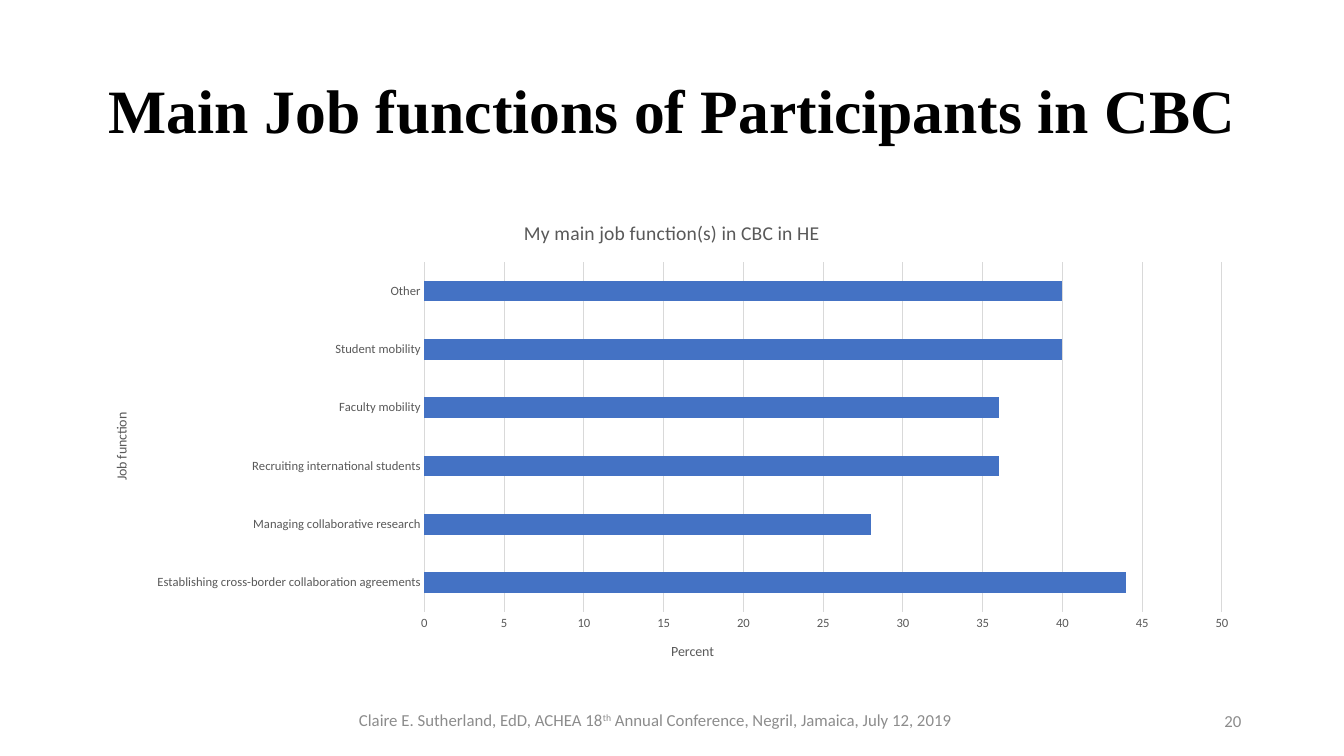
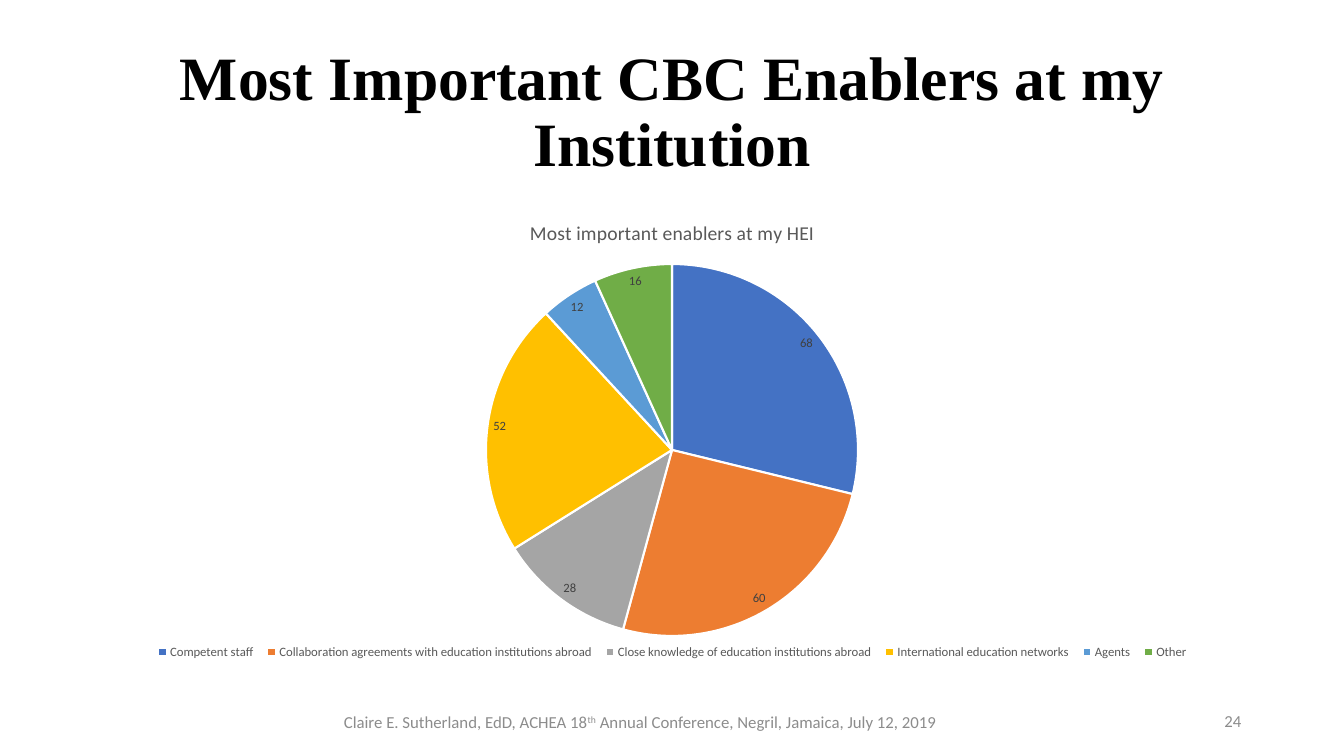
from pptx import Presentation
from pptx import util as u
from pptx.chart.data import CategoryChartData
from pptx.dml.color import RGBColor
from pptx.enum import chart as ch, text
from pptx.oxml import parse_xml
from pptx.oxml.ns import nsdecls, qn

COLORS = {
    "title": "000000", "footer": "8C8C8C", "chart_text": "595959",
    "label": "404040", "grid": "D9D9D9", "white": "FFFFFF",
    "blue": "4472C4", "orange": "ED7D31", "gray": "A5A5A5",
    "gold": "FFC000", "sky": "5B9BD5", "green": "70AD47",
}
SLICES = ("blue", "orange", "gray", "gold", "sky", "green")
FOOTER = (("Claire E. Sutherland, EdD, ACHEA 18", False), ("th", True),
          (" Annual Conference, Negril, Jamaica, July 12, 2019", False))
CHART_W, CHART_H = 11.5, 4.76


def rgb(name):
    return RGBColor.from_string(COLORS[name])


def place(element, box, inner=False):
    """Lay out a chart part by inches from the chart's top left corner."""
    old = element.find(qn("c:layout"))
    index = 0
    if old is not None:
        index = element.index(old)
        element.remove(old)
    target = '<c:layoutTarget val="inner"/>' if inner else ""
    modes = "".join(f'<c:{k}Mode val="edge"/>' for k in ("x", "y"))
    sizes = "".join(
        f'<c:{k} val="{v / whole}"/>'
        for k, v, whole in zip("xywh", box, (CHART_W, CHART_H) * 2))
    element.insert(index, parse_xml(
        f'<c:layout {nsdecls("c")}><c:manualLayout>{target}{modes}{sizes}'
        '</c:manualLayout></c:layout>'))


class Deck:
    """Shared style and the slide being built."""

    def __init__(self):
        self.prs = Presentation()
        self.prs.slide_width = u.Inches(13.33)
        self.prs.slide_height = u.Inches(7.5)
        self.s = None

    def font(self, font, size, color, name="Calibri", bold=False):
        font.size, font.name, font.bold = u.Pt(size), name, bold
        font.color.rgb = rgb(color)

    def text_box(self, box, align):
        sp = self.s.shapes.add_textbox(*map(u.Inches, box))
        tf = sp.text_frame
        tf.word_wrap = True
        tf.vertical_anchor = text.MSO_ANCHOR.MIDDLE
        p = tf.paragraphs[0]
        p.alignment = align
        return p

    def slide(self, title, number, footer_center):
        self.s = self.prs.slides.add_slide(self.prs.slide_layouts[6])
        # Title
        p = self.text_box((0.92, 0.4, 11.5, 1.45), text.PP_ALIGN.CENTER)
        p.text, p.line_spacing = title, 0.9
        self.font(p.font, 44, "title", "Times New Roman", True)
        # Footer
        x, y = footer_center
        p = self.text_box((x - 4, y - 0.2, 8, 0.4), text.PP_ALIGN.CENTER)
        self.font(p.font, 12, "footer")
        for words, raised in FOOTER:
            r = p.add_run()
            r.text = words
            if raised:
                r.font._element.set("baseline", "30000")
        # Slide number
        p = self.text_box((9.41, 6.95, 3, 0.4), text.PP_ALIGN.RIGHT)
        p.text = str(number)
        self.font(p.font, 12, "footer")

    def chart_title(self, owner, words, size, x, y):
        tf = owner.text_frame
        p = tf.paragraphs[0]
        p.text = words
        self.font(p.font, size, "chart_text")
        place(owner._element, (x, y))
        return tf

    def chart(self, kind, title, title_x, cats, vals, plot_box):
        data = CategoryChartData(number_format="0")
        data.categories = cats
        data.add_series("Series 1", vals)
        box = map(u.Inches, (0.92, 2, CHART_W, CHART_H))
        chart = self.s.shapes.add_chart(kind, *box, data).chart
        self.font(chart.font, 9, "chart_text")
        chart.has_legend = False
        chart.has_title = True
        self.chart_title(chart.chart_title, title, 14, title_x, 0.14)
        place(chart._chartSpace.chart.plotArea, plot_box, inner=True)
        return chart

    def axis(self, axis, title, x, y):
        axis.major_tick_mark = axis.minor_tick_mark = ch.XL_TICK_MARK.NONE
        self.font(axis.tick_labels.font, 9, "chart_text")
        return self.chart_title(axis.axis_title, title, 10, x, y)

    def bar_chart(self, title, cats, vals):
        chart = self.chart(ch.XL_CHART_TYPE.BAR_CLUSTERED, title, 4.24, cats,
                           vals, (3.29, 0.6, 7.91, 3.47))
        plot = chart.plots[0]
        plot.gap_width, plot.vary_by_categories = 182, False
        fill = plot.series[0].format.fill
        fill.solid()
        fill.fore_color.rgb = rgb("blue")
        # Axes
        cat, val = chart.category_axis, chart.value_axis
        tf = self.axis(cat, "Job function", 0.17, 2.07)
        tf._txBody.bodyPr.set("rot", "-5400000")
        self.axis(val, "Percent", 5.71, 4.35)
        val.minimum_scale, val.maximum_scale, val.major_unit = 0, 50, 5
        val.format.line.fill.background()
        val.has_major_gridlines = True
        for line in (cat.format.line, val.major_gridlines.format.line):
            line.color.rgb, line.width = rgb("grid"), u.Pt(0.75)

    def pie_chart(self, title, cats, vals):
        chart = self.chart(ch.XL_CHART_TYPE.PIE, title, 4.3, cats, vals,
                           (3.9, 0.61, 3.69, 3.71))
        plot = chart.plots[0]
        plot.vary_by_categories = True
        for i, color in enumerate(SLICES):
            fmt = plot.series[0].points[i].format
            fmt.fill.solid()
            fmt.fill.fore_color.rgb = rgb(color)
            fmt.line.color.rgb, fmt.line.width = rgb("white"), u.Pt(1.5)
        # Value labels
        labels = plot.series[0].data_labels
        labels.show_value = True
        labels.position = ch.XL_LABEL_POSITION.BEST_FIT
        self.font(labels.font, 9, "label")
        # Legend
        chart.has_legend = True
        chart.legend.position = ch.XL_LEGEND_POSITION.BOTTOM
        chart.legend.include_in_layout = False
        self.font(chart.legend.font, 9.1, "chart_text")
        place(chart.legend._element, (0.55, 4.32, 10.4, 0.3))


def main():
    deck = Deck()

    # Job functions
    deck.slide("Main Job functions of Participants in CBC", 20, (6.5, 7.14))
    deck.bar_chart(
        "My main job function(s) in CBC in HE",
        ("Establishing cross-border collaboration agreements",
         "Managing collaborative research",
         "Recruiting international students",
         "Faculty mobility", "Student mobility", "Other"),
        (44, 28, 36, 36, 40, 40))

    # Enablers
    deck.slide("Most Important CBC Enablers at my Institution", 24,
               (6.35, 7.16))
    deck.pie_chart(
        "Most important enablers at my HEI",
        ("Competent staff",
         "Collaboration agreements with education institutions abroad",
         "Close knowledge of education institutions abroad",
         "International education networks", "Agents", "Other"),
        (68, 60, 28, 52, 12, 16))

    deck.prs.save("out.pptx")


if __name__ == "__main__":
    main()
